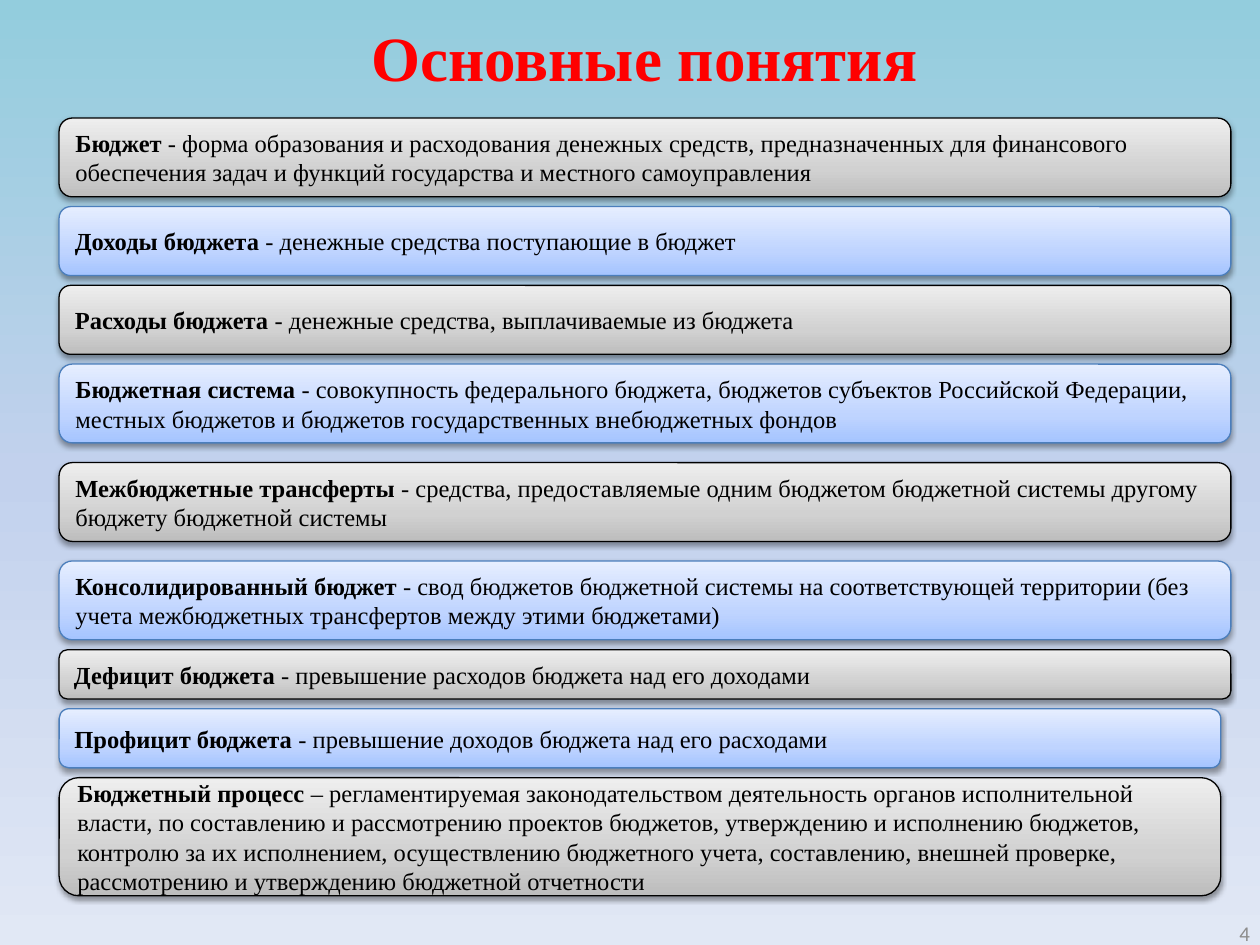
from lxml import etree
from pptx import Presentation
from pptx.dml.color import RGBColor
from pptx.enum import shapes, text
from pptx.oxml import ns
from pptx.util import Pt

COLORS = {
    "title": "FF0000", "body": "000000", "number": "8C8C8C",
    "gray_line": "000000", "blue_line": "4B7EBC", "shadow": "000000",
}
SKY = [(0, "93CDDD"), (50, "C2D1ED"), (100, "E1E8F5")]
GRAY = [(0, "BDBDBD"), (35, "D1D1D1"), (100, "EEEEEE")]
BLUE = [(0, "A4C4FF"), (35, "BFD4FF"), (100, "E6EEFF")]
SERIF = "Times New Roman"


def set_gradient(fill, parent, stops, angle):
    fill.solid()
    gradient = etree.Element(ns.qn("a:gradFill"), rotWithShape="1")
    stop_list = etree.SubElement(gradient, ns.qn("a:gsLst"))
    for position, color in stops:
        stop = etree.SubElement(stop_list, ns.qn("a:gs"), pos=str(position * 1000))
        etree.SubElement(stop, ns.qn("a:srgbClr"), val=color)
    etree.SubElement(gradient, ns.qn("a:lin"), ang=str(angle * 60000), scaled="0")
    parent.replace(parent.find(ns.qn("a:solidFill")), gradient)


def write(box, parts, size=14, font=SERIF, color="body", align="LEFT"):
    frame = box.text_frame
    frame.word_wrap = True
    frame.vertical_anchor = text.MSO_ANCHOR.MIDDLE
    para = frame.paragraphs[0]
    para.alignment = text.PP_ALIGN[align]
    for words, bold in parts:
        span = para.add_run()
        span.text = words
        span.font.size = Pt(size)
        span.font.name = font
        span.font.bold = bold
        span.font.color.rgb = RGBColor.from_string(COLORS[color])


deck = Presentation()
deck.slide_width, deck.slide_height = Pt(720), Pt(540)
page = deck.slides.add_slide(deck.slide_layouts[6])
backdrop = page.background.fill
set_gradient(backdrop, page.element.find(".//" + ns.qn("p:bgPr")), SKY, 90)

title = page.shapes.add_textbox(Pt(35.3), Pt(2.9), Pt(666), Pt(58.3))
write(title, [("Основные понятия", True)], size=36, color="title", align="CENTER")

number = page.shapes.add_textbox(Pt(684.7), Pt(519.1), Pt(36.7), Pt(28.8))
write(number, [("4", False)], size=12, font="Calibri", color="number", align="RIGHT")

concepts = [
    (67.5, 669.6, 45, "Бюджет", " - форма образования и расходования денежных средств, предназначенных для финансового обеспечения задач и функций государства и местного самоуправления"),
    (118.1, 669.6, 39.4, "Доходы бюджета ", "- денежные средства поступающие в бюджет"),
    (163.1, 669.6, 39.4, "Расходы бюджета ", "- денежные средства, выплачиваемые из бюджета"),
    (208.1, 669.6, 45, "Бюджетная система ", "- совокупность федерального бюджета, бюджетов субъектов Российской Федерации, местных бюджетов и бюджетов государственных внебюджетных фондов"),
    (264.4, 669.6, 45, "Межбюджетные трансферты ", "- средства, предоставляемые одним бюджетом бюджетной системы другому бюджету бюджетной системы"),
    (320.6, 669.6, 45, "Консолидированный бюджет ", "- свод бюджетов бюджетной системы на соответствующей территории (без учета межбюджетных трансфертов между этими бюджетами)"),
    (371.3, 669.6, 28.1, "Дефицит бюджета ", "- превышение расходов бюджета над его доходами"),
    (405, 663.8, 33.8, "Профицит бюджета ", "- превышение доходов бюджета над его расходами"),
    (444.4, 663.8, 67.5, "Бюджетный процесс ", "– регламентируемая законодательством деятельность органов исполнительной власти, по составлению и рассмотрению проектов бюджетов, утверждению и исполнению бюджетов, контролю за их исполнением, осуществлению бюджетного учета, составлению, внешней проверке, рассмотрению и утверждению бюджетной отчетности"),
]
styles = [(GRAY, "gray_line"), (BLUE, "blue_line")]

for index, (top, width, height, term, meaning) in enumerate(concepts):
    stops, line_color = styles[index % 2]
    box = page.shapes.add_shape(
        shapes.MSO_SHAPE.ROUNDED_RECTANGLE, Pt(33.8), Pt(top), Pt(width), Pt(height))
    properties = box.element.spPr
    set_gradient(box.fill, properties, stops, 270)
    box.line.color.rgb = RGBColor.from_string(COLORS[line_color])
    box.line.width = Pt(0.75)
    box.shadow.inherit = False
    shadow = etree.SubElement(
        properties.find(ns.qn("a:effectLst")), ns.qn("a:outerShdw"),
        blurRad=str(Pt(3.1)), dist=str(Pt(1.6)), dir=str(90 * 60000), rotWithShape="0")
    shade = etree.SubElement(shadow, ns.qn("a:srgbClr"), val=COLORS["shadow"])
    etree.SubElement(shade, ns.qn("a:alpha"), val="38000")
    write(box, [(term, True), (meaning, False)])

deck.save("out.pptx")
